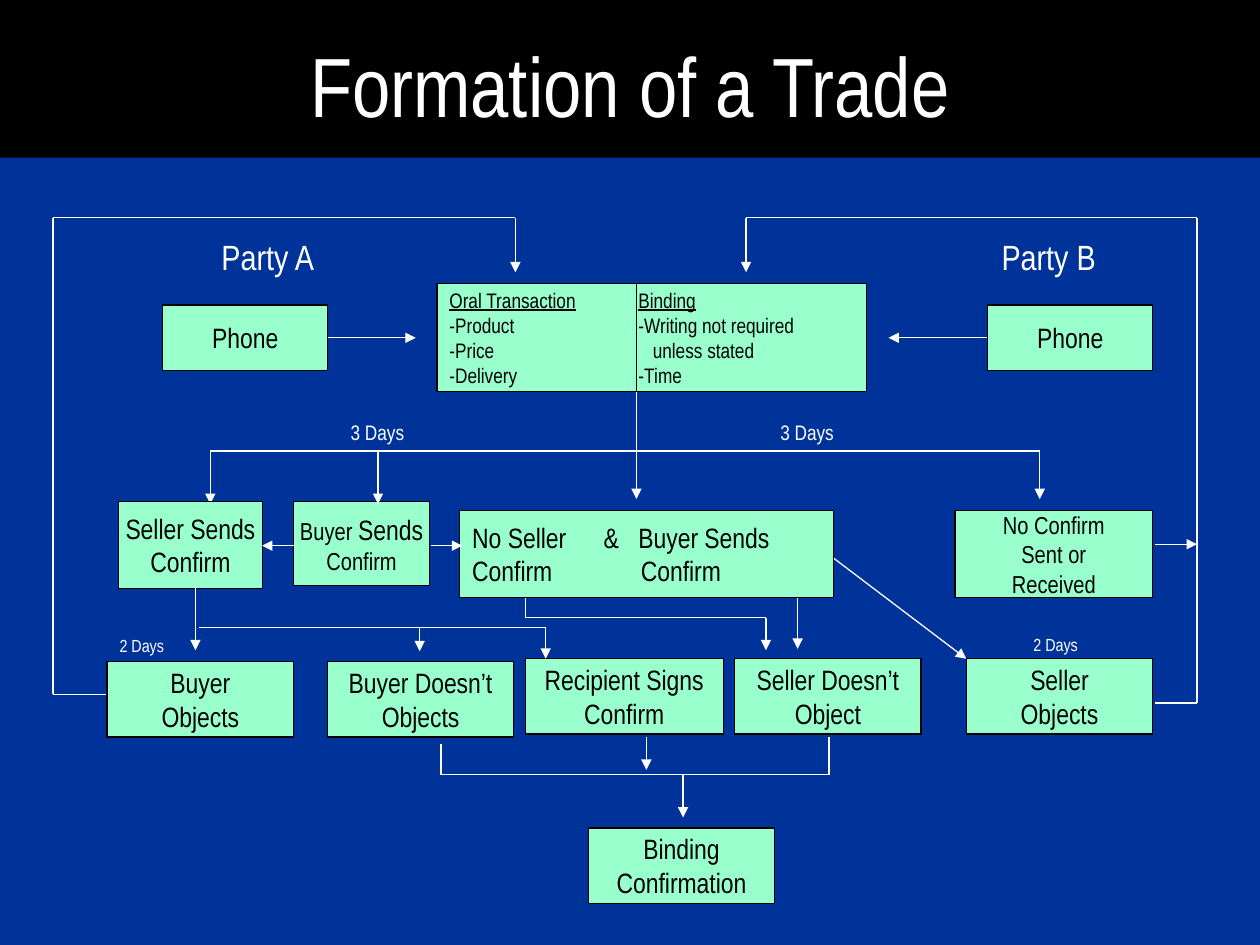
"""Build the "Formation of a Trade" flow chart slide."""
from dataclasses import dataclass

import pptx
import pptx.dml.color
import pptx.enum.shapes
import pptx.enum.text
import pptx.oxml.ns
import pptx.oxml.xmlchemy
import pptx.util
from lxml import etree

Cm = pptx.util.Cm
Pt = pptx.util.Pt
qn = pptx.oxml.ns.qn
ALIGN = pptx.enum.text.PP_ALIGN
ANCHOR = pptx.enum.text.MSO_ANCHOR
FONT = "Arial Narrow"
COLORS = {"back": "003399", "band": "000000", "box": "99FFCC",
          "ink": "000000", "light": "FFFFFF"}
OUTCOME_W, OUTCOME_H = 3.76, 1.52
STEP_H = 1.75


@dataclass
class Run:
    text: str
    size: float | None = None
    underline: bool = False


@dataclass
class Line:
    runs: list[Run]
    tabs: tuple[float, ...] = ()


@dataclass
class Box:
    left: float
    top: float
    width: float
    height: float
    lines: list[str | Line]
    size: float = 16
    centered: bool = True


@dataclass
class Label:
    text: str
    left: float
    top: float
    width: float
    height: float
    size: float
    align: ALIGN = ALIGN.CENTER
    anchor: ANCHOR = ANCHOR.TOP


@dataclass
class Route:
    points: list[tuple[float, float]]
    arrow: bool = True
    color: str = "light"


LABELS = [
    Label("Formation of a Trade", 1.9, 0.64, 21.6, 2.11, 48, anchor=ANCHOR.MIDDLE),
    Label("Party A", 3.51, 4.62, 3.78, 1.12, 20),
    Label("Party B", 19.25, 4.62, 3.78, 1.12, 20),
    Label("3 Days", 5.72, 8.33, 3.78, 0.76, 12),
    Label("3 Days", 14.38, 8.33, 3.78, 0.76, 12),
    Label("2 Days", 2.16, 12.67, 3.56, 0.69, 10, ALIGN.LEFT),
    Label("2 Days", 19.69, 12.65, 3.18, 0.69, 10),
]

BOXES = [
    Box(8.81, 5.72, 8.66, 2.18, [
        Line([Run("Oral Transaction", underline=True), Run("\t"),
              Run("Binding", underline=True)], (3.81,)),
        Line([Run("-Product\t-Writing not required")], (3.81,)),
        Line([Run("-Price\tunless stated")], (4.1,)),
        Line([Run("-Delivery\t-Time")], (3.81,)),
    ], 12, False),
    Box(3.28, 6.15, 3.33, 1.32, ["Phone"]),
    Box(19.91, 6.15, 3.33, 1.32, ["Phone"]),
    Box(2.39, 10.11, 2.9, STEP_H, ["Seller Sends", "Confirm"]),
    Box(5.92, 10.11, 2.74, 1.7,
        [Line([Run("Buyer "), Run("Sends", 16)]), "Confirm"], 14),
    Box(9.27, 10.29, 7.54, STEP_H, [
        Line([Run("No Seller\t&\tBuyer Sends")], (2.65, 3.35)),
        Line([Run("Confirm\tConfirm")], (3.4,)),
    ], 16, False),
    Box(19.25, 10.29, 3.99, STEP_H, ["No Confirm", "Sent or", "Received"], 14),
    Box(2.16, 13.34, OUTCOME_W, OUTCOME_H, ["Buyer", "Objects"]),
    Box(6.6, 13.34, OUTCOME_W, OUTCOME_H, ["Buyer Doesn’t", "Objects"]),
    Box(10.59, 13.28, 3.99, OUTCOME_H, ["Recipient Signs", "Confirm"]),
    Box(14.81, 13.28, OUTCOME_W, OUTCOME_H, ["Seller Doesn’t", "Object"]),
    Box(19.48, 13.28, OUTCOME_W, OUTCOME_H, ["Seller", "Objects"]),
    Box(11.86, 16.69, OUTCOME_W, OUTCOME_H, ["Binding", "Confirmation"]),
]

ROUTES = [
    Route([(6.6, 6.81), (8.38, 6.81)]),
    Route([(19.91, 6.81), (17.91, 6.81)]),
    Route([(12.83, 7.9), (12.83, 10.06)]),
    Route([(20.96, 9.09), (4.24, 9.09), (4.24, 10.16)]),
    Route([(20.96, 9.09), (20.96, 10.06)]),
    Route([(2.16, 14), (1.07, 14), (1.07, 4.39), (10.39, 4.39), (10.39, 5.49)]),
    Route([(23.29, 14.17), (24.13, 14.17), (24.13, 4.39), (15.04, 4.39), (15.04, 5.49)]),
    Route([(23.29, 10.97), (24.13, 10.97)]),
    Route([(10.59, 12.01), (10.59, 12.45), (15.44, 12.45), (15.44, 13.11)]),
    Route([(16.08, 12.01), (16.08, 13.08)]),
    Route([(16.71, 11.18), (19.48, 13.28)]),
    Route([(8.89, 14.99), (8.89, 15.62), (16.71, 15.62), (16.71, 14.86)], False),
    Route([(13.03, 14.86), (13.03, 15.52)]),
    Route([(13.77, 15.62), (13.77, 16.48)]),
]

FRONT_ROUTES = [
    Route([(12.83, 5.72), (12.83, 7.9)], False, "ink"),
    Route([(7.62, 9.07), (7.62, 10.16)]),
    Route([(5.92, 11), (5.28, 11)]),
    Route([(8.69, 11), (9.32, 11)]),
    Route([(3.94, 11.81), (3.94, 13.11)]),
    Route([(4.01, 12.65), (11, 12.65), (11, 13.28)]),
    Route([(8.46, 12.65), (8.46, 13.13)]),
]


def rgb(name: str) -> pptx.dml.color.RGBColor:
    """Return the named colour."""
    return pptx.dml.color.RGBColor.from_string(COLORS[name])


def write(s, lines: list[str | Line], *, size: float, color: str,
          align: ALIGN = ALIGN.CENTER, anchor: ANCHOR = ANCHOR.MIDDLE,
          wrap: bool = True) -> None:
    """Write lines of text into a shape."""
    tf = s.text_frame
    tf.word_wrap = wrap
    tf.vertical_anchor = anchor
    for i, item in enumerate(lines):
        line = Line([Run(item)]) if isinstance(item, str) else item
        p = tf.add_paragraph() if i else tf.paragraphs[0]
        p.alignment = align
        if line.tabs:
            tabs = etree.SubElement(p._p.get_or_add_pPr(), qn("a:tabLst"))
            for pos in line.tabs:
                etree.SubElement(tabs, qn("a:tab"), pos=str(int(Cm(pos))), algn="l")
        for run in line.runs:
            r = p.add_run()
            r.text = run.text
            r.font.name = FONT
            r.font.size = Pt(run.size or size)
            r.font.underline = run.underline
            r.font.color.rgb = rgb(color)


def add_rect(slide, left: float, top: float, width: float, height: float, fill: str):
    """Add a filled rectangle with a thin dark outline."""
    s = slide.shapes.add_shape(pptx.enum.shapes.MSO_SHAPE.RECTANGLE,
                               Cm(left), Cm(top), Cm(width), Cm(height))
    s.shadow.inherit = False
    s.fill.solid()
    s.fill.fore_color.rgb = rgb(fill)
    s.line.color.rgb = rgb("ink")
    s.line.width = Pt(0.75)
    return s


def add_box(slide, box: Box) -> None:
    """Add one step of the flow chart."""
    s = add_rect(slide, box.left, box.top, box.width, box.height, "box")
    write(s, box.lines, size=box.size, color="ink", wrap=not box.centered,
          align=ALIGN.CENTER if box.centered else ALIGN.LEFT)


def add_label(slide, label: Label) -> None:
    """Add free-standing light text."""
    s = slide.shapes.add_textbox(Cm(label.left), Cm(label.top),
                                 Cm(label.width), Cm(label.height))
    write(s, [label.text], size=label.size, color="light",
          align=label.align, anchor=label.anchor)


def add_route(slide, route: Route) -> None:
    """Join the points with connectors, with an arrowhead on the last one."""
    for start, end in zip(route.points, route.points[1:]):
        s = slide.shapes.add_connector(pptx.enum.shapes.MSO_CONNECTOR.STRAIGHT,
                                       *map(Cm, start + end))
        s.line.color.rgb = rgb(route.color)
        s.line.width = Pt(0.75)
        etree.SubElement(s._element.spPr, qn("a:effectLst"))
    if route.arrow:
        etree.SubElement(s.line._get_or_add_ln(), qn("a:tailEnd"), type="triangle")


def main() -> None:
    """Draw the slide and save it."""
    prs = pptx.Presentation()
    prs.slide_width, prs.slide_height = Cm(25.4), Cm(19.05)
    slide = prs.slides.add_slide(prs.slide_layouts[6])
    slide.background.fill.solid()
    slide.background.fill.fore_color.rgb = rgb("back")
    band = add_rect(slide, 0, 0, 25.4, 3.18, "band")
    band.line.fill.background()
    for add, items in ((add_label, LABELS), (add_route, ROUTES),
                       (add_box, BOXES), (add_route, FRONT_ROUTES)):
        for item in items:
            add(slide, item)
    prs.save("out.pptx")


if __name__ == "__main__":
    main()
